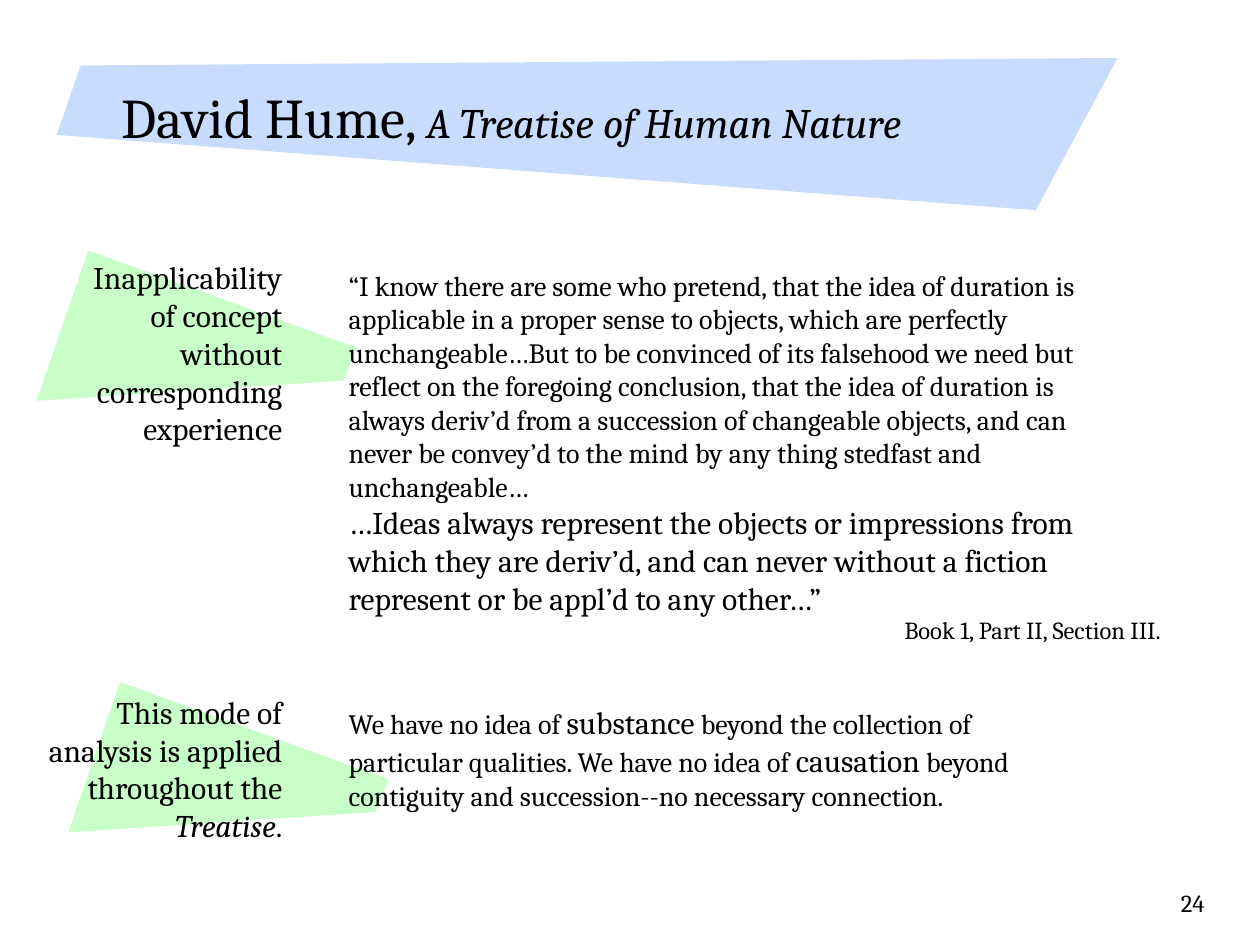
"""Build the slide on Hume's Treatise with two labelled passages."""
from pptx import Presentation
from pptx.dml.color import RGBColor
from pptx.enum.text import MSO_ANCHOR, PP_ALIGN
from pptx.util import Cm, Pt

LEFT, RIGHT = PP_ALIGN.LEFT, PP_ALIGN.RIGHT
TOP, MIDDLE = MSO_ANCHOR.TOP, MSO_ANCHOR.MIDDLE
FONT = "Cambria"
BLACK, GREEN, BLUE = "000000", "C8FFC8", "C8DCFF"


def color(value):
    return RGBColor.from_string(value)


def add_outline(corners, fill):
    points = [(Cm(x), Cm(y)) for x, y in corners]
    builder = slide.shapes.build_freeform(*points[0])
    builder.add_line_segments(points[1:], close=True)
    outline = builder.convert_to_shape()
    outline.shadow.inherit = False
    outline.fill.solid()
    outline.fill.fore_color.rgb = color(fill)
    outline.line.fill.background()


prs = Presentation()
prs.slide_width, prs.slide_height = Cm(25.4), Cm(19.05)
slide = prs.slides.add_slide(prs.slide_layouts[6])

add_outline([(22.53, 1.17), (1.63, 1.32), (1.14, 2.72), (20.88, 4.24)], BLUE)
wedge = [(0.74, 8.08), (1.78, 5.05), (7.19, 7.01), (6.93, 7.67)]
for dx, dy in [(0, 0), (0.64, 8.7)]:
    add_outline([(x + dx, y + dy) for x, y in wedge], GREEN)

title = [[("David Hume,", 32, False), (" ", 24, False),
          ("A Treatise of Human Nature", 24, True)]]
concept_label = [[("Inapplicability of concept without corresponding experience", 18, False)]]
quotation = [
    [("“I know there are some who pretend, that the idea of duration is applicable "
      "in a proper sense to objects, which are perfectly unchangeable…But to be "
      "convinced of its falsehood we need but reflect on the foregoing conclusion, "
      "that the idea of duration is always deriv’d from a succession of changeable "
      "objects, and can never be convey’d to the mind by any thing stedfast and "
      "unchangeable…", 16, False)],
    [("…Ideas always represent the objects or impressions from which they are "
      "deriv’d, and can never without a fiction represent or be appl’d to any "
      "other…”", 18, False)],
]
citation = [[("Book 1, Part II, Section III.", 14, False)]]
analysis_label = [[("This mode of analysis is applied throughout the ", 18, False),
                   ("Treatise", 18, True), (".", 18, False)]]
conclusion = [[
    ("We have no idea of ", 16, False), ("substance", 18, False),
    (" beyond the collection of particular qualities. We have no idea of ", 16, False),
    ("causation", 18, False),
    (" beyond contiguity and succession--no necessary connection.", 16, False),
]]
page_number = [[("24", 14, False)]]

passages = [
    (title, (2.21, 1.7, 21.59, 1.27), LEFT, MIDDLE, True),
    (concept_label, (0.99, 5.08, 4.95, 4.06), RIGHT, TOP, True),
    (quotation, (6.78, 5.28, 16.31, 7.29), LEFT, TOP, True),
    (citation, (17.98, 12.27, 5.92, 0.84), LEFT, TOP, False),
    (analysis_label, (0.25, 13.84, 5.69, 3.3), RIGHT, TOP, True),
    (conclusion, (6.78, 14.05, 15.24, 2.46), LEFT, TOP, True),
    (page_number, (19.25, 17.78, 5.28, 1.27), RIGHT, TOP, True),
]
for paragraphs, place, align, anchor, wrap in passages:
    frame = slide.shapes.add_textbox(*map(Cm, place)).text_frame
    frame.word_wrap = wrap
    frame.vertical_anchor = anchor
    for index, pieces in enumerate(paragraphs):
        paragraph = frame.add_paragraph() if index else frame.paragraphs[0]
        paragraph.alignment = align
        for words, size, italic in pieces:
            run = paragraph.add_run()
            run.text = words
            run.font.name = FONT
            run.font.size = Pt(size)
            run.font.italic = italic
            run.font.color.rgb = color(BLACK)

prs.save("out.pptx")
